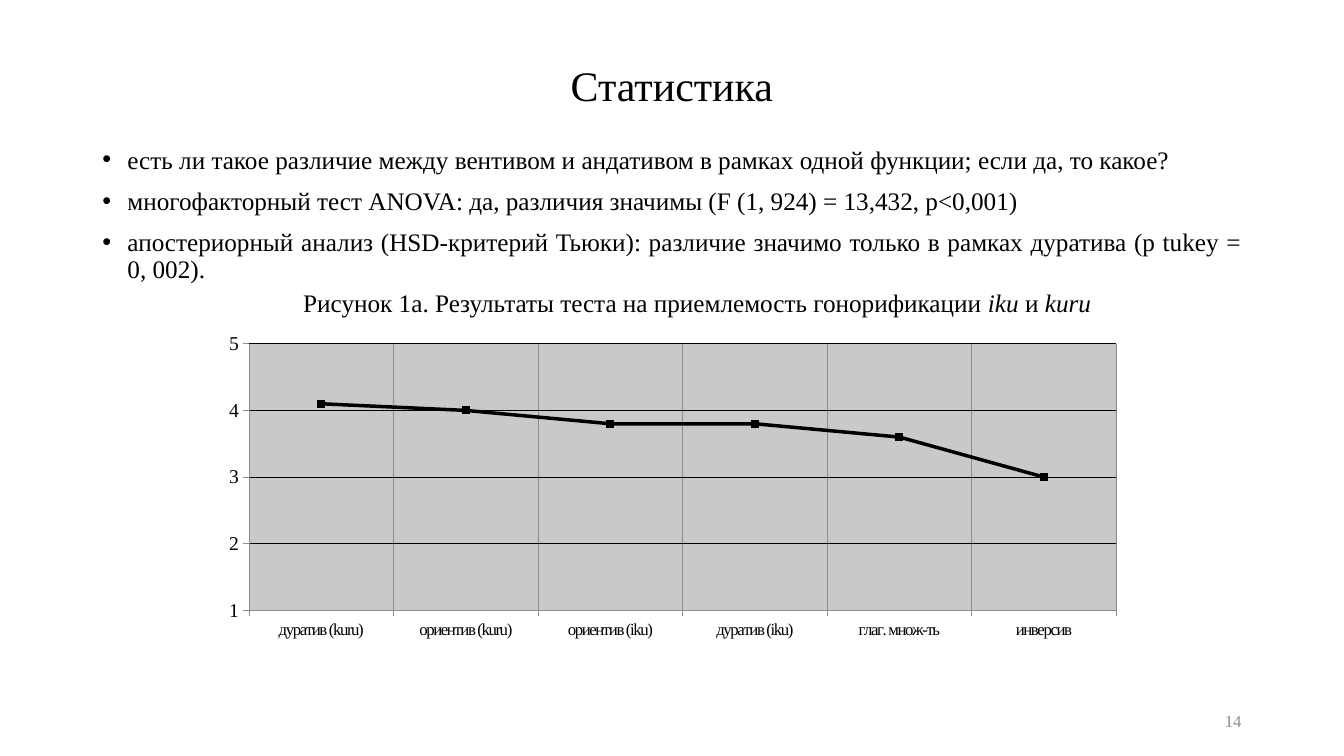
from lxml import etree
from pptx import Presentation
from pptx.chart.data import CategoryChartData
from pptx.dml.color import RGBColor
from pptx.enum.chart import XL_CHART_TYPE as CT, XL_MARKER_STYLE as MS, XL_TICK_MARK as TM
from pptx.enum.text import MSO_ANCHOR as ANCHOR, PP_ALIGN as ALIGN
from pptx.oxml import parse_xml
from pptx.oxml.ns import nsdecls, qn
from pptx.util import Inches, Pt

BLACK = RGBColor(0x00, 0x00, 0x00)
GRAY = RGBColor(0x8C, 0x8C, 0x8C)
PLOT_GRAY = RGBColor(0xC9, 0xC9, 0xC9)
FONT = "Times New Roman"

# Grid of 160 columns by 90 rows, twelve cells to the inch
CELL = Inches(1) // 12
COLS, ROWS = 160, 90
LEFT, WIDTH = 11, 138

BULLETS = [
    ("есть ли такое различие между вентивом и андативом в рамках одной функции; если да, то какое?", 1.1),
    ("многофакторный тест ANOVA: да, различия значимы (F (1, 924) = 13,432, p<0,001)", 0.9),
    ("апостериорный анализ (HSD-критерий Тьюки): различие значимо только в рамках дуратива "
     "(p tukey = 0, 002).", 0.9),
]
CAPTION = [("Рисунок 1а. Результаты теста на приемлемость гонорификации ", False),
           ("iku", True), (" и ", False), ("kuru", True)]
SCORES = {"дуратив (kuru)": 4.1, "ориентив (kuru)": 4, "ориентив (iku)": 3.8,
          "дуратив (iku)": 3.8, "глаг. множ-ть": 3.6, "инверсив": 3}


def grid(*cells):
    return [int(c * CELL) for c in cells]


def add_box(slide, left, top, width, height, anchor=ANCHOR.TOP, bottom_gap=0):
    tf = slide.shapes.add_textbox(*grid(left, top, width, height)).text_frame
    tf.word_wrap = True
    tf.vertical_anchor = anchor
    tf.margin_bottom += int(bottom_gap * CELL)
    return tf


def write(p, runs, size=18, color=BLACK, align=ALIGN.LEFT, spacing=0.9, before=0,
          indent=0, bullet=False):
    """Fill a paragraph with (text, italic) runs."""
    p.alignment, p.line_spacing, p.space_before = align, spacing, Pt(before)
    pPr = p._p.get_or_add_pPr()
    pPr.set("marL", str(int(indent * CELL)))
    pPr.set("indent", str(int(-indent * CELL) if bullet else 0))
    if bullet:
        etree.SubElement(pPr, qn("a:buFont")).set("typeface", "Arial")
        etree.SubElement(pPr, qn("a:buChar")).set("char", "•")
    for text, italic in runs:
        r = p.add_run()
        r.text = text
        r.font.name, r.font.size, r.font.italic = FONT, Pt(size), italic
        r.font.color.rgb = color


def style_axis(axis, size, grid_color):
    axis.major_tick_mark, axis.minor_tick_mark = TM.OUTSIDE, TM.NONE
    axis.tick_labels.font.name = FONT
    axis.tick_labels.font.size = Pt(size)
    axis.tick_labels.font.color.rgb = BLACK
    axis.format.line.color.rgb = GRAY
    axis.has_major_gridlines = True
    line = axis.major_gridlines.format.line
    line.color.rgb, line.width = grid_color, Pt(0.75)


def style_plot_area(chart, x, y, w, h):
    """Place the inner plot area in shares of the chart and fill it."""
    area = chart._chartSpace.chart.plotArea
    for old in area.findall(qn("c:layout")):
        area.remove(old)
    sizes = "".join(f'<c:{tag} val="{val}"/>' for tag, val in zip("xywh", (x, y, w, h)))
    area.insert(0, parse_xml(
        f'<c:layout {nsdecls("c")}><c:manualLayout><c:layoutTarget val="inner"/>'
        f'<c:xMode val="edge"/><c:yMode val="edge"/>{sizes}</c:manualLayout></c:layout>'))
    area.append(parse_xml(
        f'<c:spPr {nsdecls("c", "a")}><a:solidFill><a:srgbClr val="{PLOT_GRAY}"/>'
        f'</a:solidFill></c:spPr>'))


def add_score_chart(slide, left, top, width, height):
    data = CategoryChartData()
    data.categories = list(SCORES)
    data.add_series("Series 1", list(SCORES.values()))
    chart = slide.shapes.add_chart(CT.LINE_MARKERS, *grid(left, top, width, height), data).chart
    chart.has_legend = chart.has_title = False
    chart.font.name, chart.font.size = "Arial", Pt(14)
    chart.font.color.rgb = BLACK

    # Axes
    style_axis(chart.category_axis, 12, GRAY)
    chart.category_axis.tick_labels.font._element.set("spc", "-100")
    values = chart.value_axis
    style_axis(values, 14, BLACK)
    values.minimum_scale, values.maximum_scale, values.major_unit = 1, 5, 1

    # Line and markers
    chart.plots[0].vary_by_categories = False
    series = chart.plots[0].series[0]
    series.smooth = False
    series.format.line.color.rgb, series.format.line.width = BLACK, Pt(2.5)
    marker = series.marker
    marker.style, marker.size = MS.SQUARE, 5
    marker.format.fill.solid()
    marker.format.fill.fore_color.rgb = BLACK
    marker.format.line.color.rgb = BLACK
    style_plot_area(chart, 0.09, 0.06, 0.91, 0.79)


def main():
    prs = Presentation()
    prs.slide_width, prs.slide_height = grid(COLS, ROWS)
    slide = prs.slides.add_slide(prs.slide_layouts[6])

    # Title
    tf = add_box(slide, LEFT, 4.8, WIDTH, 17.4, anchor=ANCHOR.MIDDLE, bottom_gap=6)
    write(tf.paragraphs[0], [("Статистика", False)], size=30, align=ALIGN.CENTER)

    # Bullets and chart caption
    tf = add_box(slide, LEFT, 16.2, WIDTH, 64.8)
    for i, (text, spacing) in enumerate(BULLETS):
        p = tf.add_paragraph() if i else tf.paragraphs[0]
        write(p, [(text, False)], align=ALIGN.JUSTIFY, spacing=spacing, before=10,
              indent=3, bullet=True)
    write(tf.add_paragraph(), CAPTION, align=ALIGN.CENTER, before=5, indent=6)

    # Chart
    add_score_chart(slide, 19.44, 38.52, 113.52, 40.2)

    # Slide number
    tf = add_box(slide, 113, 83.4, 36, 4.8, anchor=ANCHOR.MIDDLE)
    write(tf.paragraphs[0], [("14", False)], size=12, color=GRAY, align=ALIGN.RIGHT, spacing=1.0)

    prs.save("out.pptx")


if __name__ == "__main__":
    main()
